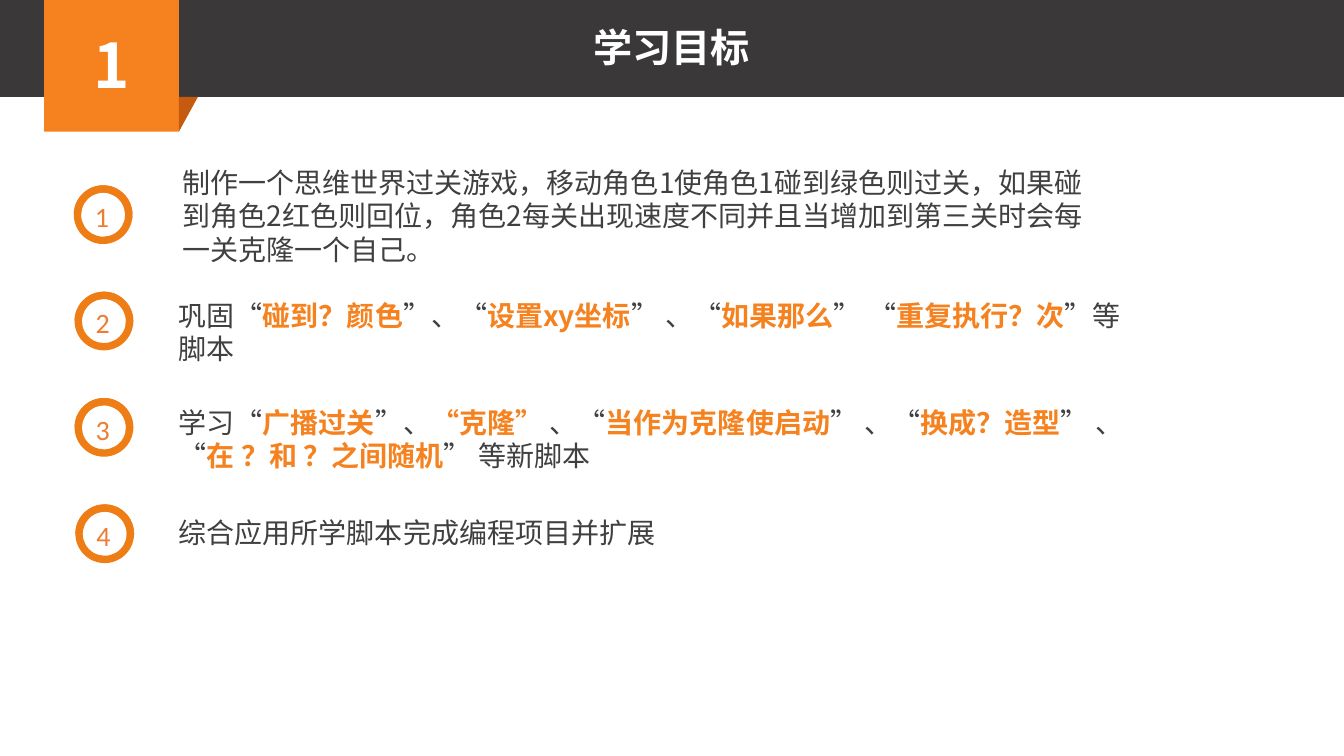
from dataclasses import dataclass

from lxml import etree
from pptx import Presentation
from pptx import util as u
from pptx.dml.color import RGBColor
from pptx.enum import lang, shapes, text
from pptx.oxml import ns


@dataclass(frozen=True)
class Theme:
    band: str = "3A3838"
    accent: str = "F5821F"
    fold: str = "C55A11"
    ring: str = "EE7D16"
    ring_number: str = "ED7D31"
    body: str = "404040"
    white: str = "FFFFFF"
    cjk_font: str = "Noto Sans CJK SC"
    number_font: str = "Calibri"
    section_size: int = 44
    title_size: int = 28
    body_size: int = 20
    body_leading: int = 24


@dataclass(frozen=True)
class Box:
    left: float
    top: float
    width: float
    height: float

    def lengths(self) -> tuple:
        return tuple(u.Cm(n) for n in (self.left, self.top, self.width, self.height))


@dataclass(frozen=True)
class Goal:
    """A learning goal; every second phrase is highlighted."""
    phrases: tuple
    box: Box
    ring_left: float


THEME = Theme()
RING_TOP, RING_STEP, RING_SIZE = 4.67, 2.68, 1.48

GOALS = (
    Goal(("制作一个思维世界过关游戏，移动角色1使角色1碰到绿色则过关，如果碰到角色2红色则回位，"
          "角色2每关出现速度不同并且当增加到第三关时会每一关克隆一个自己。",),
         Box(4.34, 4.04, 23.57, 2.82), 1.86),
    Goal(("巩固“", "碰到？颜色", "”、“", "设置xy坐标", "” 、“", "如果那么", "” “",
          "重复执行？次", "”等脚本"),
         Box(4.25, 7.39, 24.51, 1.96), 1.88),
    Goal(("学习“", "广播过关", "”、", "“克隆”", " 、“", "当作为克隆使启动", "” 、“",
          "换成？造型", "” 、“", "在 ？和 ？之间随机", "” 等新脚本"),
         Box(4.25, 10.08, 24.51, 1.96), 1.88),
    Goal(("综合应用所学脚本完成编程项目并扩展",), Box(4.25, 12.85, 24.51, 1.12), 1.9),
)


def add_run(paragraph, words: str, size: int, color: str, bold: bool = False,
            font: str = THEME.cjk_font) -> None:
    run = paragraph.add_run()
    run.text = words
    run.font.name = font
    run.font.size = u.Pt(size)
    run.font.bold = bold
    run.font.color.rgb = RGBColor.from_string(color)
    run.font.language_id = lang.MSO_LANGUAGE_ID.SIMPLIFIED_CHINESE
    east_asian = etree.SubElement(run.font._element, ns.qn("a:ea"))
    east_asian.set("typeface", font)


def add_filled(parent, kind, box: Box, color: str):
    shape = parent.add_shape(kind, *box.lengths())
    shape.shadow.inherit = False
    shape.fill.solid()
    shape.fill.fore_color.rgb = RGBColor.from_string(color)
    shape.line.fill.background()
    return shape


def place(placeholder, box: Box, anchor):
    """Move a placeholder and return its first paragraph."""
    placeholder.left, placeholder.top, placeholder.width, placeholder.height = box.lengths()
    frame = placeholder.text_frame
    frame.word_wrap = True
    frame.auto_size = text.MSO_AUTO_SIZE.NONE
    frame.vertical_anchor = anchor
    return frame.paragraphs[0]


def add_ring(slide, number: int, left: float) -> None:
    top = RING_TOP + (number - 1) * RING_STEP
    box = Box(left, top, RING_SIZE, RING_SIZE)
    group = slide.shapes.add_group_shape()
    ring = add_filled(group.shapes, shapes.MSO_SHAPE.DONUT, box, THEME.ring)
    ring.adjustments[0] = 0.125
    arc = add_filled(group.shapes, shapes.MSO_SHAPE.BLOCK_ARC, box, THEME.ring)
    for index, value in enumerate((107.952, 5.13, 0.125)):
        arc.adjustments[index] = value
    label = group.shapes.add_textbox(*Box(left + 0.28, top + 0.23, 0.91, 1.12).lengths())
    label.text_frame.word_wrap = False
    add_run(label.text_frame.paragraphs[0], str(number), THEME.body_size,
            THEME.ring_number, font=THEME.number_font)


def fill_goal(placeholder, goal: Goal) -> None:
    paragraph = place(placeholder, goal.box, text.MSO_ANCHOR.TOP)
    paragraph.line_spacing = u.Pt(THEME.body_leading)
    paragraph.space_before = u.Pt(0)
    properties = paragraph._p.get_or_add_pPr()
    properties.set("marL", "0")
    properties.set("indent", "0")
    etree.SubElement(properties, ns.qn("a:buNone"))
    for index, phrase in enumerate(goal.phrases):
        highlighted = index % 2 == 1
        add_run(paragraph, phrase, THEME.body_size,
                THEME.accent if highlighted else THEME.body, highlighted)


def add_header(slide) -> None:
    add_filled(slide.shapes, shapes.MSO_SHAPE.RECTANGLE, Box(0, -0.08, 33.87, 2.52), THEME.band)
    section = add_filled(slide.shapes, shapes.MSO_SHAPE.RECTANGLE,
                         Box(1.11, -0.08, 3.4, 3.4), THEME.accent)
    section.text_frame.vertical_anchor = text.MSO_ANCHOR.MIDDLE
    number = section.text_frame.paragraphs[0]
    number.alignment = text.PP_ALIGN.CENTER
    add_run(number, "1", THEME.section_size, THEME.white, True)
    fold = add_filled(slide.shapes, shapes.MSO_SHAPE.RIGHT_TRIANGLE,
                      Box(4.51, 2.44, 0.48, 0.88), THEME.fold)
    fold._element.spPr.find(ns.qn("a:xfrm")).set("flipV", "1")

    # Title, brought in front of the band
    title = slide.shapes.title
    heading = place(title, Box(11.38, 0.46, 11.1, 1.45), text.MSO_ANCHOR.MIDDLE)
    heading.alignment = text.PP_ALIGN.CENTER
    add_run(heading, "学习目标", THEME.title_size, THEME.white, True)
    slide.shapes._spTree.append(title._element)


def main() -> None:
    deck = Presentation()
    deck.slide_width, deck.slide_height = u.Cm(33.87), u.Cm(19.05)
    # The comparison layout offers a title and four body placeholders
    slide = deck.slides.add_slide(deck.slide_layouts.get_by_name("Comparison"))
    bodies = [p for p in slide.placeholders if p.placeholder_format.idx in range(1, 5)]

    # Header
    add_header(slide)

    # Numbered goals
    for number, (body, goal) in enumerate(zip(bodies, GOALS), start=1):
        add_ring(slide, number, goal.ring_left)
        fill_goal(body, goal)

    deck.save("out.pptx")


if __name__ == "__main__":
    main()
